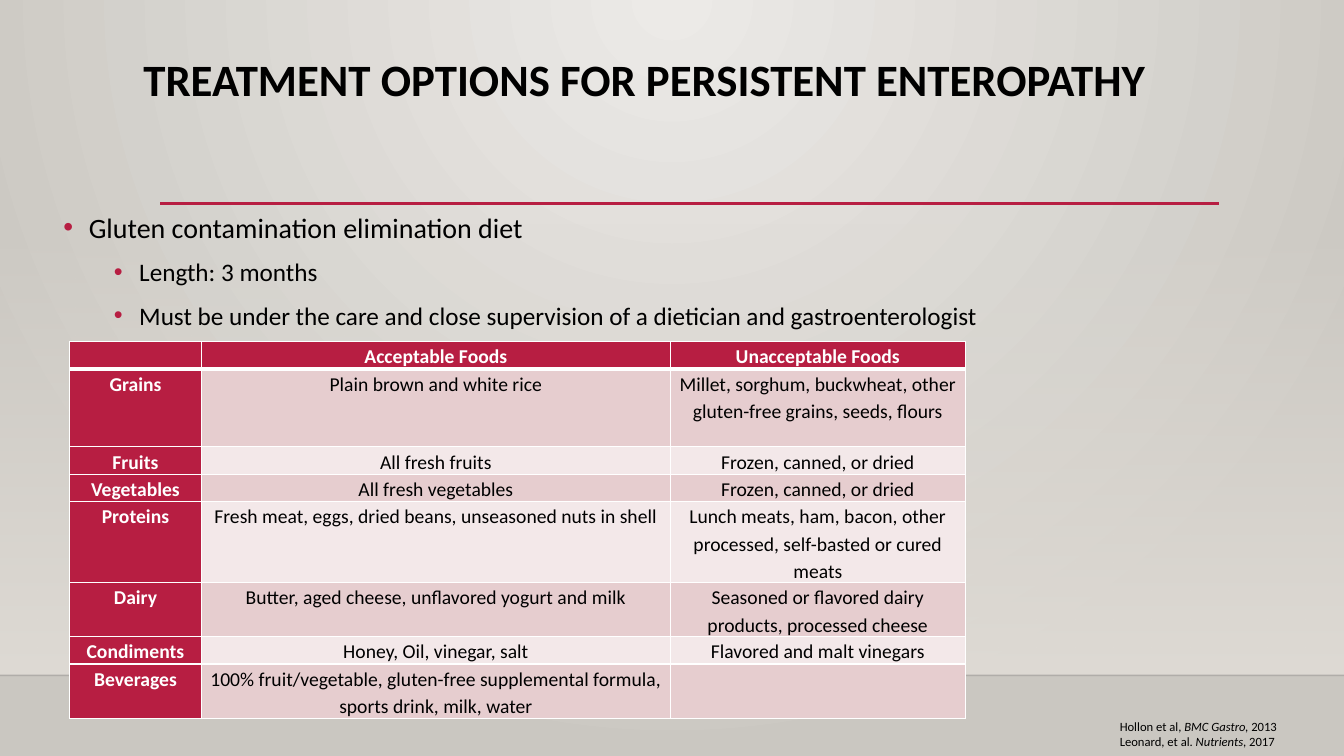
from dataclasses import dataclass

from lxml import etree
from pptx import Presentation
from pptx.dml.color import RGBColor
from pptx.enum.shapes import MSO_CONNECTOR, MSO_SHAPE
from pptx.enum.text import MSO_ANCHOR, MSO_AUTO_SIZE, PP_ALIGN
from pptx.oxml.ns import qn
from pptx.util import Cm, Pt

CENTER = PP_ALIGN.CENTER
TOP = MSO_ANCHOR.TOP
GROW = MSO_AUTO_SIZE.SHAPE_TO_FIT_TEXT
RECT = MSO_SHAPE.RECTANGLE
STRAIGHT = MSO_CONNECTOR.STRAIGHT
WIDE, HIGH = 33.87, 19.05
FLOOR = 17.02


@dataclass(frozen=True)
class Theme:
    font: str = "Calibri"
    ink: str = "000000"
    white: str = "FFFFFF"
    red: str = "B71E42"
    glow: str = "ECEAE7"
    edge: str = "CAC7C1"
    wall: str = "DFDBD5"
    seam: str = "000001"
    bands: tuple = ("E6CDCF", "F3E8E9")
    title: int = 32
    levels: tuple = (20, 18)
    cell: int = 14
    cite: int = 9


def rgb(code):
    return RGBColor.from_string(code)


def add(parent, tag, **attrs):
    return etree.SubElement(parent, qn(tag), {k: str(v) for k, v in attrs.items()})


class Deck:
    """Draw styled elements on the current slide."""

    def __init__(self, theme):
        self.theme = theme
        self.file = Presentation()
        self.file.slide_width, self.file.slide_height = Cm(WIDE), Cm(HIGH)
        self.slide = self.file.slides.add_slide(self.file.slide_layouts[5])
        self.shapes = self.slide.shapes

    def blend(self, fill, start, end):
        fill.gradient()
        for stop, code in zip(fill.gradient_stops, (start, end)):
            stop.color.rgb = rgb(code)

    def backdrop(self):
        fill = self.slide.background.fill
        self.blend(fill, self.theme.glow, self.theme.edge)
        lin = self.slide.background._cSld.find(".//" + qn("a:lin"))
        ring = etree.Element(qn("a:path"), {"path": "circle"})
        add(ring, "a:fillToRect", l=43000, t=0, r=43000, b=100000)
        lin.getparent().replace(lin, ring)

    def wall(self, top, base):
        shape = self.shapes.add_shape(RECT, 0, Cm(top), Cm(WIDE), Cm(base - top))
        shape.shadow.inherit = False
        shape.line.fill.background()
        self.blend(shape.fill, self.theme.wall, self.theme.wall)
        shape.fill.gradient_angle = 270
        add(shape._element.find(".//" + qn("a:srgbClr")), "a:alpha", val=0)

    def rule(self, left, right, y, color, width, alpha=100):
        line = self.shapes.add_connector(STRAIGHT, Cm(left), Cm(y), Cm(right), Cm(y))
        line.line.color.rgb = rgb(color)
        line.line.width = Pt(width)
        props = line._element.spPr
        if alpha < 100:
            add(props.find(".//" + qn("a:srgbClr")), "a:alpha", val=alpha * 1000)
        add(props, "a:effectLst")

    def run(self, para, text, size, color=None, bold=False, slant=False):
        run = para.add_run()
        run.text = text
        font = run.font
        font.name, font.size = self.theme.font, Pt(size)
        font.bold, font.italic = bold, slant
        font.color.rgb = rgb(color or self.theme.ink)

    def title(self, text, left, top, width, height):
        shape = self.shapes.title
        shape.left, shape.top = Cm(left), Cm(top)
        shape.width, shape.height = Cm(width), Cm(height)
        shape.text_frame.vertical_anchor = TOP
        para = shape.text_frame.paragraphs[0]
        para.alignment, para.line_spacing = CENTER, 0.9
        self.run(para, text, self.theme.title, bold=True)

    def box(self, left, top, width, height):
        frame = self.shapes.add_textbox(Cm(left), Cm(top), Cm(width), Cm(height)).text_frame
        frame.word_wrap = True
        return frame

    def paras(self, frame, items):
        for i, item in enumerate(items):
            yield (frame.add_paragraph() if i else frame.paragraphs[0]), item

    def bullets(self, items, *place):
        for para, (level, text) in self.paras(self.box(*place), items):
            para.level, para.line_spacing = level, 1.2
            if level:
                para.space_before = Pt(5)
            props = para._p.get_or_add_pPr()
            props.set("marL", str(Cm(0.64 + 1.27 * level)))
            props.set("indent", str(-Cm(0.64)))
            add(add(props, "a:buClr"), "a:srgbClr", val=self.theme.red)
            add(props, "a:buFont", typeface="Arial")
            add(props, "a:buChar", char="•")
            self.run(para, text, self.theme.levels[level])

    def cite(self, items, *place):
        frame = self.box(*place)
        frame.auto_size = GROW
        for para, parts in self.paras(frame, items):
            for text, slant in parts:
                self.run(para, text, self.theme.cite, slant=slant)

    def border(self, cell, above, below):
        props = cell._tc.get_or_add_tcPr()
        for side, width in zip("LRTB", (1, 1, above, below)):
            line = add(props, "a:ln" + side, w=Pt(width))
            add(add(line, "a:solidFill"), "a:srgbClr", val=self.theme.white)

    def cell(self, cell, text, row, col):
        look = self.theme
        head = row == 0 or col == 0
        self.border(cell, 3 if row == 1 else 1, 3 if row == 0 else 1)
        cell.fill.solid()
        cell.fill.fore_color.rgb = rgb(look.red if head else look.bands[(row - 1) % 2])
        cell.margin_left = cell.margin_right = Cm(0.18)
        cell.margin_top = cell.margin_bottom = 0
        para = cell.text_frame.paragraphs[0]
        para.alignment, para.line_spacing, para.space_after = CENTER, 1.15, Pt(10)
        if text:
            self.run(para, text, look.cell, look.white if head else look.ink, head)
        else:
            add(para._p, "a:endParaRPr", sz=look.cell * 100)

    def table(self, rows, left, top, widths, heights):
        grid = self.shapes.add_table(len(rows), len(widths), Cm(left), Cm(top),
                                     Cm(sum(widths)), Cm(sum(heights))).table
        for col, width in zip(grid.columns, widths):
            col.width = Cm(width)
        for r, (texts, height) in enumerate(zip(rows, heights)):
            grid.rows[r].height = Cm(height)
            for c, text in enumerate(texts):
                self.cell(grid.cell(r, c), text, r, c)


FOODS = [
    ("", "Acceptable Foods", "Unacceptable Foods"),
    ("Grains", "Plain brown and white rice",
     "Millet, sorghum, buckwheat, other gluten-free grains, seeds, flours"),
    ("Fruits", "All fresh fruits", "Frozen, canned, or dried"),
    ("Vegetables", "All fresh vegetables", "Frozen, canned, or dried"),
    ("Proteins", "Fresh meat, eggs, dried beans, unseasoned nuts in shell",
     "Lunch meats, ham, bacon, other processed, self-basted or cured meats"),
    ("Dairy", "Butter, aged cheese, unflavored yogurt and milk",
     "Seasoned or flavored dairy products, processed cheese"),
    ("Condiments", "Honey, Oil, vinegar, salt", "Flavored and malt vinegars"),
    ("Beverages",
     "100% fruit/vegetable, gluten-free supplemental formula, sports drink, milk, water", ""),
]
DIET = [
    (0, "Gluten contamination elimination diet"),
    (1, "Length: 3 months"),
    (1, "Must be under the care and close supervision of a dietician and gastroenterologist"),
]
PAPERS = [
    [("Hollon et al, ", False), ("BMC Gastro, ", True), ("2013", False)],
    [("Leonard, et al. ", False), ("Nutrients", True), (", 2017", False)],
]


def main():
    theme = Theme()
    deck = Deck(theme)
    deck.backdrop()
    deck.wall(5.61, FLOOR)
    deck.rule(0, WIDE, FLOOR, theme.seam, 1, 20)
    deck.rule(4.04, 30.73, 5.13, theme.red, 2.5)
    deck.title("TREATMENT OPTIONS FOR PERSISTENT ENTEROPATHY", 0.33, 1.32, 31.83, 3.68)
    deck.bullets(DIET, 1.35, 5, 31.7, 13.28)
    deck.cite(PAPERS, 27.97, 17.98, 5.08, 1.02)
    one, two, three = 0.69, 1.3, 1.96
    deck.table(FOODS, 1.75, 8.61, (3.33, 11.81, 7.44),
               (one, three, one, one, three, two, one, two))
    deck.file.save("out.pptx")


if __name__ == "__main__":
    main()
